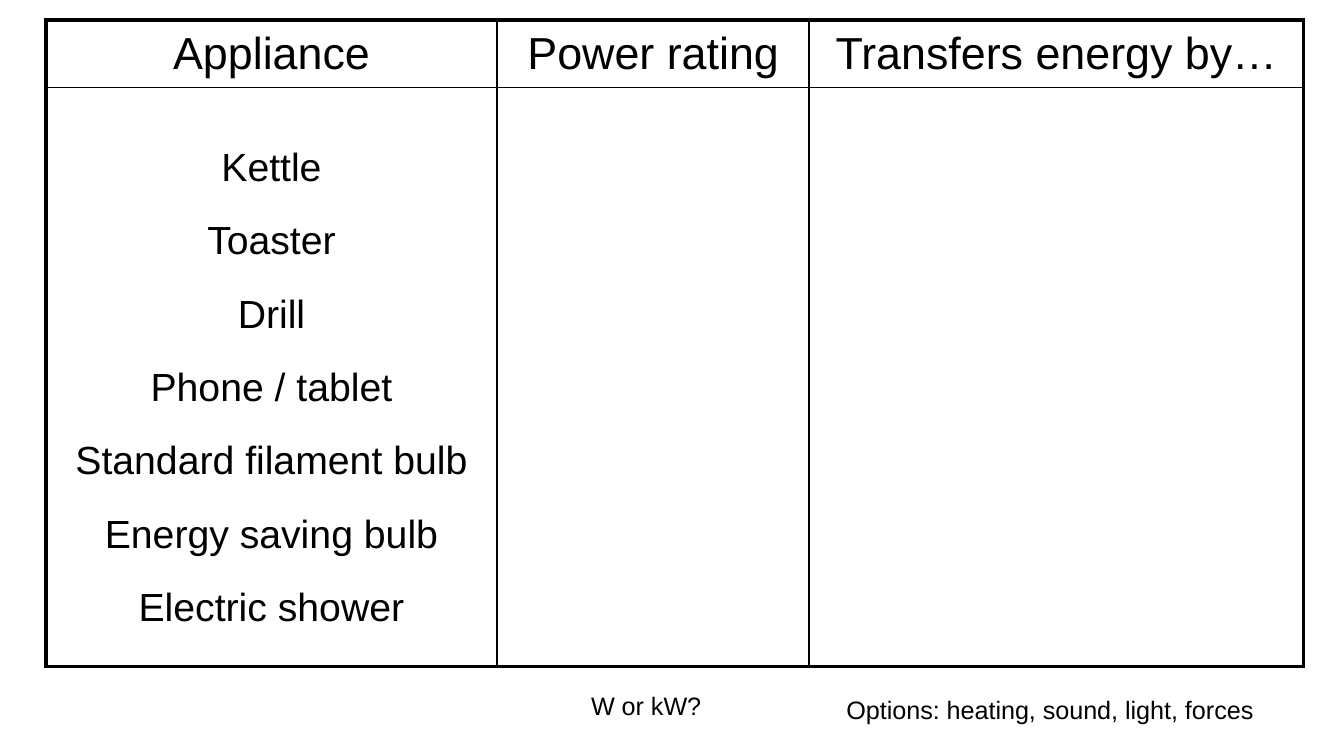
from lxml import etree
from pptx import Presentation
from pptx.dml.color import RGBColor
from pptx.enum.text import MSO_ANCHOR, MSO_AUTO_SIZE, PP_ALIGN
from pptx.oxml.ns import qn
from pptx.util import Inches, Pt

CENTER, MIDDLE = PP_ALIGN.CENTER, MSO_ANCHOR.MIDDLE
GROW = MSO_AUTO_SIZE.SHAPE_TO_FIT_TEXT
FONT, INK = "Arial", "000000"
THICK, THIN = 2.25, 1
WIDE = 10

HEADS = ["Appliance", "Power rating", "Transfers energy by…"]
ITEMS = ["Kettle", "Toaster", "Drill", "Phone / tablet",
         "Standard filament bulb", "Energy saving bulb", "Electric shower"]
NOTES = [("Options: heating, sound, light, forces", 6.2, 5.12, 3.53),
         ("W or kW?", 4.3, 5.09, 1.13)]
WIDTHS = [3.36, 2.32, 3.68]
HEIGHTS = [0.5, 4.31]


def color(code):
    return RGBColor.from_string(code)


def add_run(para, text, size):
    run = para.add_run()
    run.text = text
    run.font.name = FONT
    run.font.size = Pt(size)
    run.font.color.rgb = color(INK)


def fill_cell(cell, lines, size, gap=None):
    """Write centred lines, each with 20% space before it."""
    frame = cell.text_frame
    for i, line in enumerate(lines):
        para = frame.add_paragraph() if i else frame.paragraphs[0]
        para.alignment = CENTER
        if gap:
            para.line_spacing = gap
        para.space_before = Pt(0)
        before = para._p.pPr.find(qn("a:spcBef"))
        before.clear()
        etree.SubElement(before, qn("a:spcPct"), val="20000")
        add_run(para, line, size)


def add_edges(cell, widths):
    """Draw the left, right, top and bottom borders, in that order."""
    props = cell._tc.get_or_add_tcPr()
    for i, (side, width) in enumerate(zip("LRTB", widths)):
        line = etree.Element(qn("a:ln" + side), w=str(Pt(width)))
        fill = etree.SubElement(line, qn("a:solidFill"))
        etree.SubElement(fill, qn("a:srgbClr"), val=INK)
        props.insert(i, line)


prs = Presentation()
prs.slide_width, prs.slide_height = Inches(WIDE), Inches(WIDE * 9 / 16)
slide = prs.slides.add_slide(prs.slide_layouts[6])

rows, cols = len(HEIGHTS), len(WIDTHS)
table = slide.shapes.add_table(
    rows, cols, Inches(0.34), Inches(0.15),
    Inches(sum(WIDTHS)), Inches(sum(HEIGHTS))).table
table.first_row = table.horz_banding = False
for col, width in zip(table.columns, WIDTHS):
    col.width = Inches(width)
for row, height in zip(table.rows, HEIGHTS):
    row.height = Inches(height)

for r in range(rows):
    for c in range(cols):
        cell = table.cell(r, c)
        cell.fill.background()
        cell.vertical_anchor = MIDDLE
        cell.margin_left = cell.margin_right = Inches(0.07)
        cell.margin_top = cell.margin_bottom = Inches(0.04)
        outer = (c == 0, c == cols - 1, r == 0, r == rows - 1)
        add_edges(cell, [THICK if edge else THIN for edge in outer])

for c, head in enumerate(HEADS):
    fill_cell(table.cell(0, c), [head], 24)
fill_cell(table.cell(1, 0), ITEMS, 21, 1.5)

for text, left, top, width in NOTES:
    box = slide.shapes.add_textbox(
        Inches(left), Inches(top), Inches(width), Inches(0.33))
    frame = box.text_frame
    frame.word_wrap = True
    frame.auto_size = GROW
    add_run(frame.paragraphs[0], text, 13.5)

prs.save("out.pptx")
